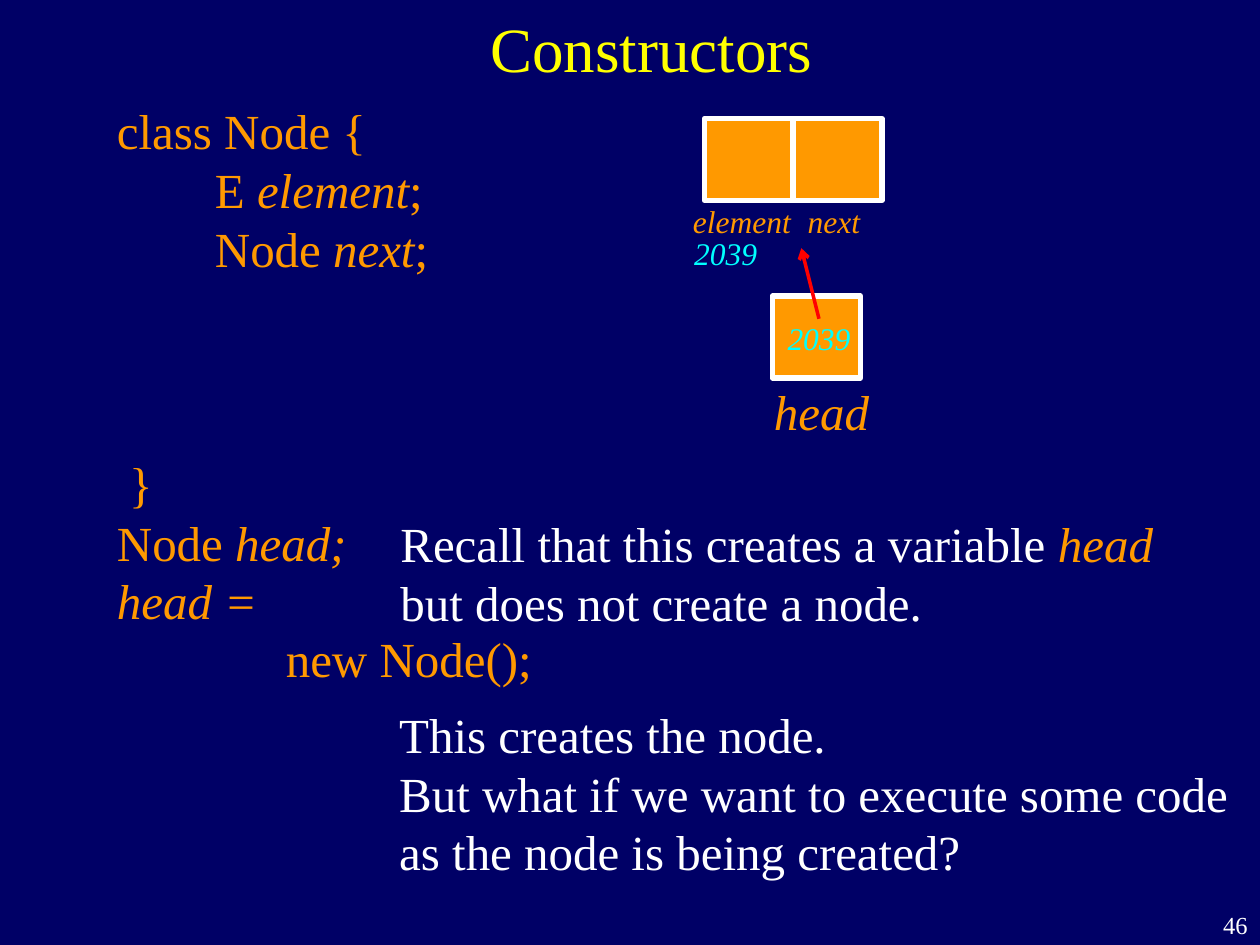
"""Build the Constructors slide about creating a linked-list node."""
from dataclasses import dataclass

from lxml.etree import SubElement
from pptx import Presentation
from pptx.dml.color import RGBColor
from pptx.enum.shapes import MSO_CONNECTOR, MSO_SHAPE
from pptx.enum.text import MSO_ANCHOR, PP_ALIGN
from pptx.oxml.ns import qn
from pptx.util import Inches, Pt

COLORS = {"navy": "000066", "yellow": "FFFF00", "orange": "FF9900",
          "white": "FFFFFF", "cyan": "00FFFF", "red": "FF0000"}
FONT = "Times New Roman"
CELL = Inches(0.1)
COLUMNS, ROWS = 100, 75
LEADING = 33.6
CODE_INDENT = Pt(56)


@dataclass
class Box:
    """A rectangle in columns and rows of the slide grid."""
    left: float
    top: float
    width: float
    height: float

    def inner(self, left, top, width, height):
        """Return a box placed relative to this one."""
        return Box(self.left + left, self.top + top, width, height)

    def lengths(self):
        """Return left, top, width and height as slide lengths."""
        return [round(value * CELL)
                for value in (self.left, self.top, self.width, self.height)]


def color(name):
    """Return the named colour."""
    return RGBColor.from_string(COLORS[name])


def add_text(page, box, lines, size=28, fill="orange", italic=False, align=PP_ALIGN.LEFT,
             anchor=MSO_ANCHOR.TOP, inset=True, wrap=True, leading=None, indents=None, gaps=None):
    """Write lines, each a string or a list of (text, format) spans."""
    shape = page.shapes.add_textbox(*box.lengths())
    frame = shape.text_frame
    frame.word_wrap = wrap
    frame.vertical_anchor = anchor
    if not inset:
        frame.margin_left = frame.margin_right = frame.margin_top = frame.margin_bottom = 0
    for index, line in enumerate(lines):
        para = frame.paragraphs[0] if index == 0 else frame.add_paragraph()
        para.alignment = align
        if leading:
            para.line_spacing = Pt(leading)
        if index in (indents or {}):
            para._p.get_or_add_pPr().set("marL", str(indents[index]))
        if index in (gaps or {}):
            para.space_before = Pt(gaps[index])
        for text, style in [(line, {})] if isinstance(line, str) else line:
            span = para.add_run()
            span.text = text
            span.font.name = FONT
            span.font.size = Pt(size)
            span.font.italic = style.get("italic", italic)
            span.font.color.rgb = color(style.get("fill", fill))


def add_cell(page, box):
    """Draw one outlined memory cell."""
    shape = page.shapes.add_shape(MSO_SHAPE.RECTANGLE, *box.lengths())
    shape.shadow.inherit = False
    shape.fill.solid()
    shape.fill.fore_color.rgb = color("orange")
    shape.line.color.rgb = color("white")
    shape.line.width = Pt(3)


def add_arrow(page, box):
    """Draw an arrow from the bottom right of the box to its top left."""
    left, top, width, height = box.lengths()
    arrow = page.shapes.add_connector(
        MSO_CONNECTOR.STRAIGHT, left + width, top + height, left, top)
    arrow.line.color.rgb = color("red")
    arrow.line.width = Pt(2)
    SubElement(arrow.line._get_or_add_ln(), qn("a:tailEnd"), type="arrow")
    SubElement(arrow._element.spPr, qn("a:effectLst"))


def add_label(page, box, text, fill="orange"):
    """Write a small italic label of the diagram."""
    add_text(page, box, [text], size=18, fill=fill, italic=True, inset=False, wrap=False)


def add_code(page, box):
    """Write the class and the statements that use it."""
    slanted = {"italic": True}
    lines = ["class Node {",
             [("E ", {}), ("element", slanted), (";", {})],
             [("Node ", {}), ("next", slanted), (";", {})],
             "}",
             [("Node ", {}), ("head;", slanted)],
             [("head =", slanted)]]
    add_text(page, box.inner(0, 0, 48.3, 48.1), lines, leading=LEADING,
             indents={1: CODE_INDENT, 2: CODE_INDENT, 3: Pt(7)}, gaps={3: 3 * LEADING})
    add_text(page, box.inner(13.4, 41.9, 42.5, 5.7), ["new Node();"], leading=LEADING)


def add_diagram(page, box):
    """Draw the node, the head variable and the reference between them."""
    cell_width, cell_height = 7, 6.5
    for index in range(2):
        add_cell(page, box.inner(0.9 + index * 7.1, 0, cell_width, cell_height))
    add_cell(page, box.inner(6.3, 14.1, cell_width, cell_height))
    add_text(page, box.inner(4.2, 20.9, 12, 4.7), ["head"], italic=True,
             align=PP_ALIGN.CENTER, inset=False, leading=LEADING)
    add_label(page, box.inner(0, 6.6, 8.6, 3), "element")
    add_label(page, box.inner(9.1, 6.6, 4.2, 3), "next")
    add_label(page, box.inner(0.1, 9.2, 5, 3), "2039", "cyan")
    add_label(page, box.inner(7.5, 15.9, 5.1, 3), "2039", "cyan")
    add_arrow(page, box.inner(8.6, 10.3, 1.4, 5.6))


def add_remarks(page, box):
    """Write the remarks on declaring and creating a node."""
    variable = {"fill": "orange", "italic": True}
    add_text(page, box.inner(0, 0, 69, 10.4),
             [[("Recall that this creates a variable ", {}), ("head", variable)],
              "but does not create a node."], fill="white", leading=LEADING)
    add_text(page, box.inner(-0.1, 15.1, 69.2, 15.1),
             ["This creates the node.", "But what if we want to execute some code",
              "as the node is being created?"], fill="white", leading=LEADING)


def main():
    """Build and save the deck."""
    deck = Presentation()
    deck.slide_width, deck.slide_height = COLUMNS * CELL, ROWS * CELL
    page = deck.slides.add_slide(deck.slide_layouts[6])
    page.background.fill.solid()
    page.background.fill.fore_color.rgb = color("navy")
    add_text(page, Box(9.2, -2.5, 85, 12.5), ["Constructors"], size=36, fill="yellow",
             align=PP_ALIGN.CENTER, anchor=MSO_ANCHOR.MIDDLE)
    add_code(page, Box(8.3, 7.5, 48.3, 48.1))
    add_remarks(page, Box(30.8, 40.3, 69, 30.2))
    add_diagram(page, Box(55, 9.4, 15, 25.6))
    add_text(page, Box(95, 71.7, 5, 3.3), ["46"], size=14, fill="white", align=PP_ALIGN.RIGHT)
    deck.save("out.pptx")


if __name__ == "__main__":
    main()
